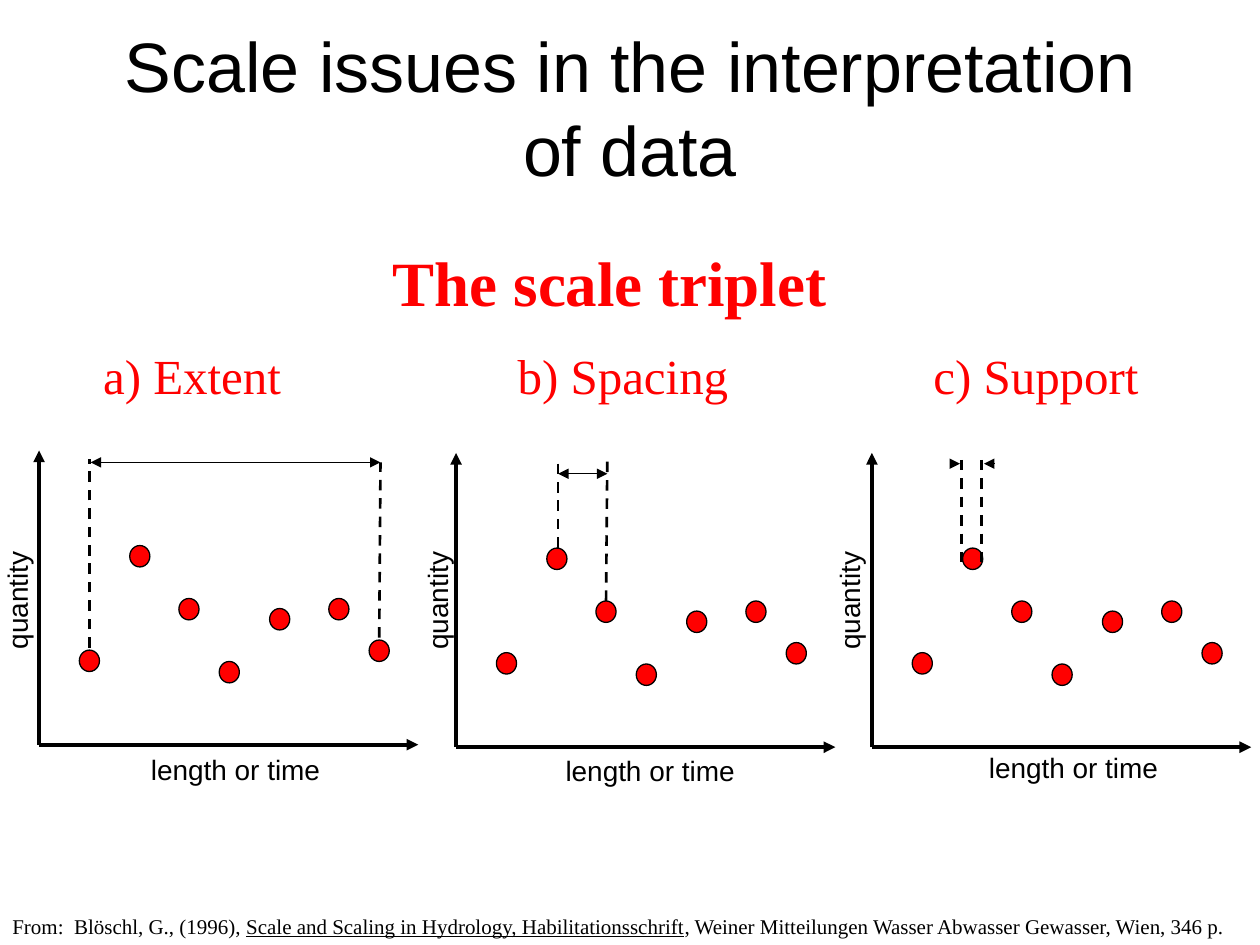
from dataclasses import dataclass

import pptx
import pptx.dml.color
import pptx.enum.dml
import pptx.enum.shapes
import pptx.enum.text
import pptx.oxml.ns
import pptx.oxml.xmlchemy
import pptx.util

COLUMNS, ROWS = 100, 75


@dataclass(frozen=True)
class Theme:
    ink: str = "000000"
    accent: str = "FF0000"
    sans: str = "Arial"
    serif: str = "Times New Roman"
    title: float = 40
    heading: float = 36
    panel: float = 28
    label: float = 16
    source: float = 12
    axis: float = 2.25
    guide: float = 1.5
    thin: float = 0.75


@dataclass(frozen=True)
class Panel:
    """One plot; guides and spans are measured from the plot's origin."""
    caption: str
    caption_box: tuple
    origin: tuple
    length_box: tuple
    quantity_box: tuple
    guides: tuple
    spans: tuple  # (x1, x2, y, head, tail)


class SlideBuilder:
    def __init__(self, presentation, theme):
        self.theme = theme
        self.slide = presentation.slides.add_slide(presentation.slide_layouts[5])
        self.target = self.slide.shapes
        self.column = presentation.slide_width / COLUMNS
        self.row = presentation.slide_height / ROWS

    def start_group(self):
        self.target = self.slide.shapes.add_group_shape().shapes

    def end_group(self):
        self.target = self.slide.shapes

    def place(self, x, y):
        return round(x * self.column), round(y * self.row)

    def box(self, x, y, width, height):
        return *self.place(x, y), *self.place(width, height)

    def colour(self, value):
        return pptx.dml.color.RGBColor.from_string(value)

    def format_runs(self, frame, size, font, colour, bold=False):
        for paragraph in frame.paragraphs:
            for run in paragraph.runs:
                run.font.size = pptx.util.Pt(size)
                run.font.name = font
                run.font.bold = bold
                run.font.color.rgb = self.colour(colour)

    def title(self, text, bounds):
        heading = self.slide.shapes.title
        heading.left, heading.top, heading.width, heading.height = self.box(*bounds)
        frame = heading.text_frame
        frame.text = text
        frame.word_wrap = True
        frame.auto_size = pptx.enum.text.MSO_AUTO_SIZE.NONE
        frame.vertical_anchor = pptx.enum.text.MSO_ANCHOR.MIDDLE
        frame.paragraphs[0].alignment = pptx.enum.text.PP_ALIGN.CENTER
        self.format_runs(frame, self.theme.title, self.theme.sans, self.theme.ink)

    def text(self, parts, bounds, size, font, colour, bold=False, wrap=True,
             rotation=0, underlined=None):
        """Write the parts as runs of one paragraph; underlined is a part's index."""
        label = self.target.add_textbox(*self.box(*bounds))
        label.rotation = rotation
        frame = label.text_frame
        frame.word_wrap = wrap
        for index, part in enumerate(parts):
            run = frame.paragraphs[0].add_run()
            run.text = part
            run.font.underline = index == underlined
        self.format_runs(frame, size, font, colour, bold)

    def line(self, start, end, weight, dashed=False, head=False, tail=False):
        connector = self.target.add_connector(
            pptx.enum.shapes.MSO_CONNECTOR.STRAIGHT,
            *self.place(*start), *self.place(*end))
        connector.line.color.rgb = self.colour(self.theme.ink)
        connector.line.width = pptx.util.Pt(weight)
        if dashed:
            connector.line.dash_style = pptx.enum.dml.MSO_LINE.DASH
        properties = connector._element.find(pptx.oxml.ns.qn("p:spPr"))
        outline = properties.find(pptx.oxml.ns.qn("a:ln"))
        for tag, wanted in (("a:headEnd", head), ("a:tailEnd", tail)):
            if wanted:
                arrowhead = pptx.oxml.xmlchemy.OxmlElement(tag)
                arrowhead.set("type", "triangle")
                outline.append(arrowhead)
        properties.append(pptx.oxml.xmlchemy.OxmlElement("a:effectLst"))

    def dot(self, x, y, width=1.6, height=1.7):
        """Draw a sample centred on x, y."""
        sample = self.target.add_shape(
            pptx.enum.shapes.MSO_SHAPE.OVAL,
            *self.box(x - width / 2, y - height / 2, width, height))
        sample.shadow.inherit = False
        sample.fill.solid()
        sample.fill.fore_color.rgb = self.colour(self.theme.accent)
        sample.line.color.rgb = self.colour(self.theme.ink)
        sample.line.width = pptx.util.Pt(self.theme.thin)

    def plot(self, panel):
        theme = self.theme
        left, base = panel.origin

        def from_origin(x, y):
            return left + x, base + y

        self.start_group()
        for axis_end in (from_origin(0, -23.35), from_origin(30.1, 0)):
            self.line(panel.origin, axis_end, theme.axis, tail=True)
        for words, bounds, rotation in (("length or time", panel.length_box, 0),
                                        ("quantity", panel.quantity_box, 270)):
            self.text([words], bounds, theme.label, theme.sans, theme.ink,
                      rotation=rotation)
        for sample in SAMPLES:
            self.dot(*from_origin(*sample))
        for start, end in panel.guides:
            self.line(from_origin(*start), from_origin(*end), theme.guide, dashed=True)
        for x1, x2, y, head, tail in panel.spans:
            self.line(from_origin(x1, y), from_origin(x2, y), theme.thin,
                      head=head, tail=tail)
        self.end_group()


SAMPLES = ((4, -6.65), (8, -14.95), (11.9, -10.75), (15.1, -5.75),
           (19.1, -9.95), (23.8, -10.75), (27, -7.45))

PANELS = (
    Panel("a) Extent", (7.2, 26.9, 16.1, 5.7), (3.1, 59.1),
          (11, 59.2, 16.6, 3.7), (-4, 45.3, 10.7, 3.7),
          guides=(((4, -7.7), (4, -22.7)), ((27, -8.5), (27.1, -22.4))),
          spans=((4.1, 27.1, -22.4, True, True),)),
    Panel("b) Spacing", (40.1, 26.9, 18.8, 5.7), (36.2, 59.3),
          (43.9, 59.3, 16, 3.7), (29.3, 45.3, 10.8, 3.7),
          guides=(((11.9, -11.6), (12, -22.7)), ((8.1, -22.5), (8.1, -15.8))),
          spans=((8.1, 12, -21.7, True, True),)),
    Panel("c) Support", (73.1, 26.9, 18.3, 5.7), (69.2, 59.3),
          (77.5, 59.1, 17, 3.7), (61.6, 44.9, 11.6, 3.7),
          guides=(((7.1, -22.8), (7.1, -14.4)), ((8.7, -22.8), (8.7, -14.4))),
          spans=((6.2, 7, -22.5, False, True), (8.9, 9.7, -22.5, True, False))),
)


def main():
    presentation = pptx.Presentation()
    presentation.slide_width = pptx.util.Inches(10)
    presentation.slide_height = pptx.util.Inches(7.5)
    theme = Theme()
    builder = SlideBuilder(presentation, theme)

    builder.title("Scale issues in the interpretation of data", (7.7, 2.3, 84.6, 12.3))
    builder.text(["The scale triplet"], (30.2, 18.8, 44.3, 7),
                 theme.heading, theme.serif, theme.accent, bold=True)
    builder.text(["From:  Blöschl, G., (1996), ",
                  "Scale and Scaling in Hydrology, Habilitationsschrift",
                  ", Weiner Mitteilungen Wasser Abwasser Gewasser, Wien, 346 p."],
                 (0, 72, 100, 3), theme.source, theme.serif, theme.ink, underlined=1)
    for panel in PANELS:
        builder.text([panel.caption], panel.caption_box, theme.panel, theme.serif,
                     theme.accent, wrap=False)
        builder.plot(panel)

    presentation.save("out.pptx")


if __name__ == "__main__":
    main()
